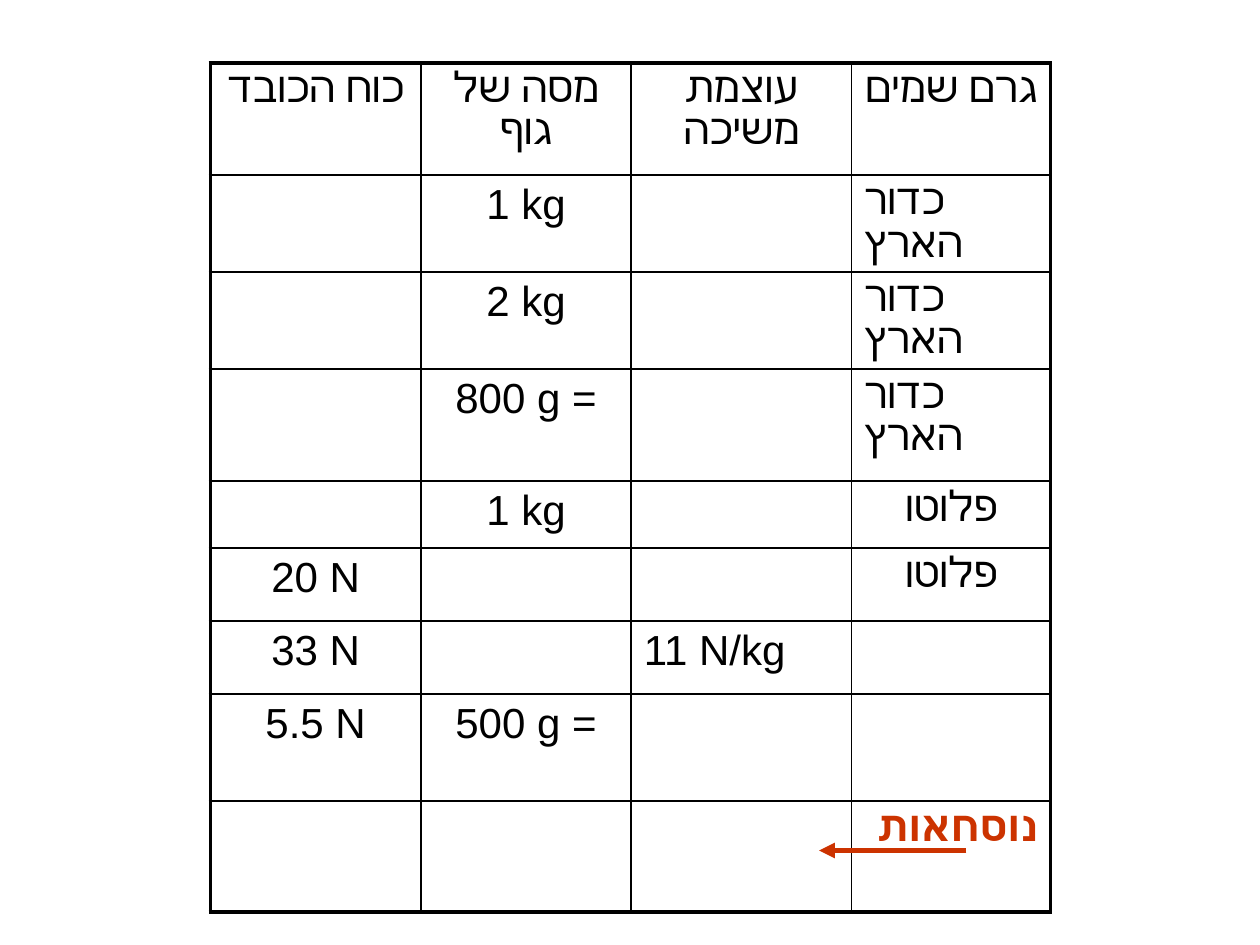
from lxml import etree
from pptx import Presentation
from pptx import util as u
from pptx.dml.color import RGBColor
from pptx.enum import shapes, text
from pptx.oxml import ns

BLACK, RED = "000000", "CC3300"
THIN, THICK = 1, 2.25
LEFT, CENTER, RIGHT = text.PP_ALIGN.LEFT, text.PP_ALIGN.CENTER, text.PP_ALIGN.RIGHT
COLUMN_WIDTHS = [1.67, 1.67, 1.75, 1.58]
ROW_HEIGHTS = [0.89, 0.77, 0.77, 0.89, 0.53, 0.58, 0.58, 0.85, 0.88]
EARTH, PLUTO = "כדור הארץ", "פלוטו"
ROWS = [
    ["כוח הכובד", "מסה של גוף", "עוצמת משיכה", "גרם שמים"],
    ["", "1 kg", "", EARTH],
    ["", "2 kg", "", EARTH],
    ["", "800 g =", "", EARTH],
    ["", "1 kg", "", PLUTO],
    ["20 N", "", "", PLUTO],
    ["33 N", "", "11 N/kg", ""],
    ["5.5 N", "500 g =", "", ""],
    ["", "", "", "נוסחאות"],
]
BODY = {"size": u.Pt(24), "name": "Arial", "bold": False}
FORMULAS = {**BODY, "bold": True}
ALIGNMENTS = {EARTH: LEFT, "11 N/kg": LEFT, "נוסחאות": RIGHT}


def color(value):
    """Turn a hex string into a colour."""
    return RGBColor.from_string(value)


def add_element(parent, tag, **attributes):
    """Append a DrawingML element and return it."""
    return etree.SubElement(parent, ns.qn(tag), attributes)


def set_borders(cell, widths):
    """Draw the cell's borders, given a width in points for each side."""
    properties = cell._tc.get_or_add_tcPr()
    for side, width in widths.items():
        line = add_element(properties, f"a:ln{side}", w=str(u.Pt(width)))
        add_element(add_element(line, "a:solidFill"), "a:srgbClr", val=BLACK)


def write_cell(cell, words, is_header, is_formula):
    """Write one cell's text with its alignment and format."""
    paragraph = cell.text_frame.paragraphs[0]
    paragraph.alignment = ALIGNMENTS.get(words, CENTER)
    properties = paragraph._p.get_or_add_pPr()
    if is_header:
        properties.set("rtl", "1")
    add_element(add_element(properties, "a:spcBef"), "a:spcPct", val="20000")
    run = paragraph.add_run()
    run.text = words
    for name, value in (FORMULAS if is_formula else BODY).items():
        setattr(run.font, name, value)
    run.font.color.rgb = color(RED if is_formula else BLACK)


def add_gravity_table(slide, left, top, width, height):
    """Place the table of masses and weights in the given box."""
    last_row, last_column = len(ROWS) - 1, len(COLUMN_WIDTHS) - 1
    table = slide.shapes.add_table(
        len(ROWS), len(COLUMN_WIDTHS), left, top, width, height).table
    table.first_row = table.horz_banding = False
    for column, size in zip(table.columns, COLUMN_WIDTHS):
        column.width = u.Inches(size)
    for row, size in zip(table.rows, ROW_HEIGHTS):
        row.height = u.Inches(size)
    for i, row in enumerate(ROWS):
        for j, words in enumerate(row):
            cell = table.cell(i, j)
            set_borders(cell, {
                "L": THICK if j == 0 else THIN,
                "R": THICK if j == last_column else THIN,
                "T": THICK if i == 0 else THIN,
                "B": THICK if i == last_row else THIN,
            })
            cell.fill.background()
            if words:
                write_cell(cell, words, i == 0, i == last_row)


def add_formula_arrow(slide, left, top, width):
    """Draw the arrow that points left across the given width."""
    arrow = slide.shapes.add_connector(
        shapes.MSO_CONNECTOR.STRAIGHT, left + width, top, left, top)
    arrow.line.color.rgb = color(RED)
    arrow.line.width = u.Pt(3)
    add_element(arrow.line._get_or_add_ln(), "a:tailEnd", type="triangle")
    add_element(arrow._element.spPr, "a:effectLst")


def main():
    """Build and save the presentation."""
    presentation = Presentation()
    presentation.slide_width = u.Inches(10)
    presentation.slide_height = u.Inches(7.5)
    slide = presentation.slides.add_slide(presentation.slide_layouts[6])
    add_gravity_table(slide, u.Inches(1.67), u.Inches(0.5),
                      u.Inches(sum(COLUMN_WIDTHS)), u.Inches(sum(ROW_HEIGHTS)))
    add_formula_arrow(slide, u.Inches(6.5), u.Inches(6.75), u.Inches(1.17))
    presentation.save("out.pptx")


if __name__ == "__main__":
    main()
